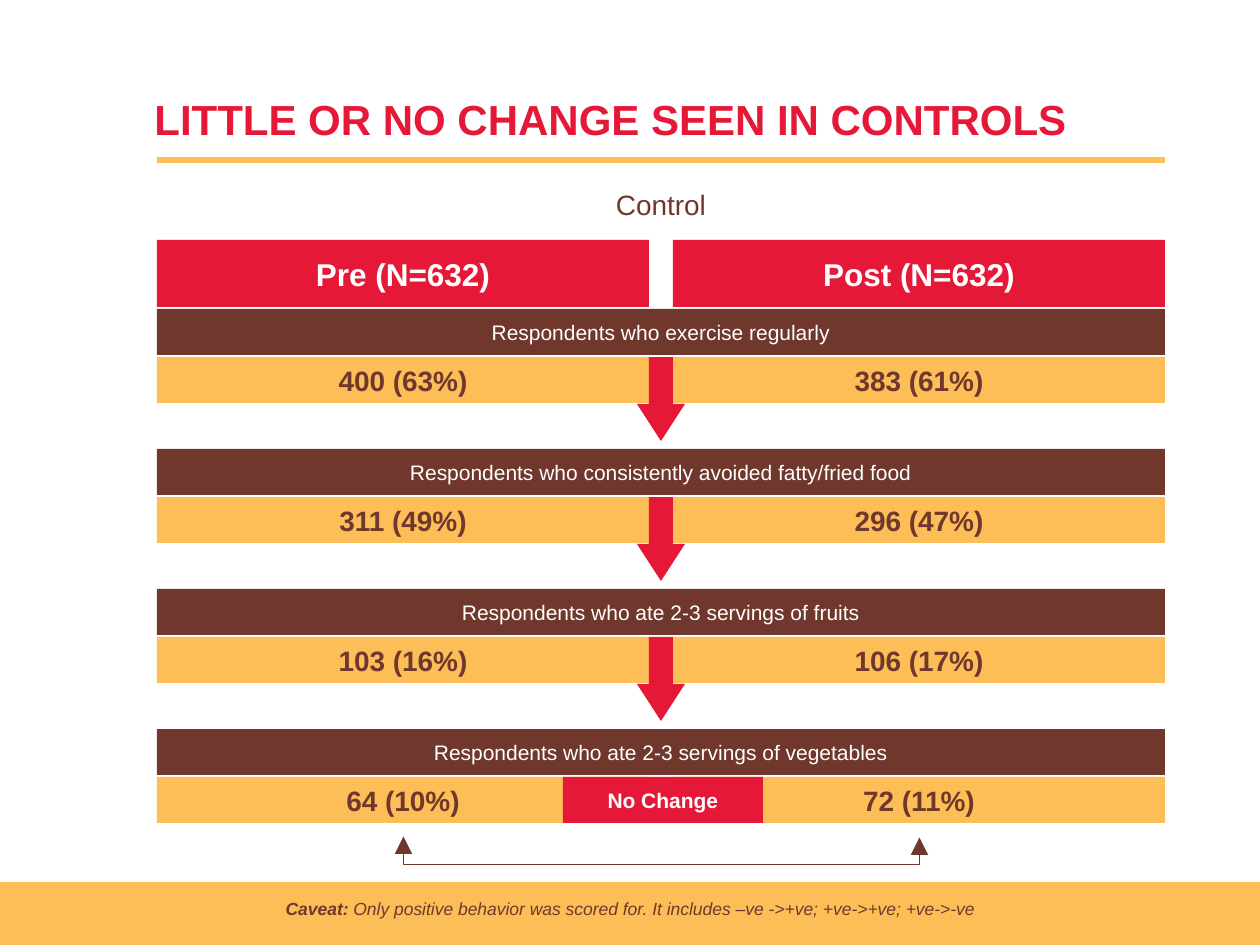
from lxml.etree import SubElement
from pptx import Presentation
from pptx.dml.color import RGBColor
from pptx.enum.shapes import MSO_CONNECTOR, MSO_SHAPE
from pptx.enum.text import MSO_ANCHOR, PP_ALIGN
from pptx.oxml.ns import qn
from pptx.util import Pt

# Content
TITLE = "LITTLE OR NO CHANGE SEEN IN CONTROLS"
GROUP = "Control"
HEADERS = ("Pre (N=632)", "Post (N=632)")
BEHAVIORS = [
    ("Respondents who exercise regularly", ("400 (63%)", "383 (61%)")),
    ("Respondents who consistently avoided fatty/fried food", ("311 (49%)", "296 (47%)")),
    ("Respondents who ate 2-3 servings of fruits", ("103 (16%)", "106 (17%)")),
    ("Respondents who ate 2-3 servings of vegetables", ("64 (10%)", "72 (11%)")),
]
RESULT = "No Change"
CAVEAT = ("Caveat: ", "Only positive behavior was scored for. "
          "It includes –ve ->+ve; +ve->+ve; +ve->-ve")

# Colours and layout (px, 126 to the inch)
RED, BROWN, GOLD, WHITE = "E51937", "70382D", "FDBE57", "FFFFFF"
SCALE = 914400 / 126
SLIDE_W, SLIDE_H = 1260, 945
LEFT, WIDTH, GAP = 157, 1008, 24
COL_W = (WIDTH - GAP) // 2
COLUMNS = (LEFT, LEFT + COL_W + GAP)
MIDDLE = LEFT + WIDTH // 2
FIRST_ROW, PITCH, BAR_H, VALUE_DY = 309, 140, 46, 48


def px(n):
    return round(n * SCALE)


def rgb(color):
    return RGBColor.from_string(color)


def style(font, size, color, bold=False, italic=False):
    font.name, font.size, font.bold, font.italic = "Arial", Pt(size), bold, italic
    font.color.rgb = rgb(color)


def add_block(x, y, w, h, fill, text="", size=12, color=WHITE, bold=False,
              kind=MSO_SHAPE.RECTANGLE):
    sp = s.shapes.add_shape(kind, px(x), px(y), px(w), px(h))
    sp.shadow.inherit = False
    sp.fill.solid()
    sp.fill.fore_color.rgb = rgb(fill)
    sp.line.fill.background()
    if text:
        tf = sp.text_frame
        tf.vertical_anchor = MSO_ANCHOR.MIDDLE
        p = tf.paragraphs[0]
        p.text, p.alignment = text, PP_ALIGN.CENTER
        style(p.font, size, color, bold)
    return sp


def add_text(x, y, w, h, runs, size, color, align=PP_ALIGN.CENTER, **look):
    tf = s.shapes.add_textbox(px(x), px(y), px(w), px(h)).text_frame
    tf.word_wrap = True
    p = tf.paragraphs[0]
    p.alignment = align
    style(p.font, size, color, **look)
    for text in runs:
        p.add_run().text = text
    return tf


def add_bracket(x1, x2, y, depth):
    # An elbow 1 px wide, turned a quarter so that its middle leg hangs below
    center, span = (x1 + x2) / 2, x2 - x1
    cn = s.shapes.add_connector(MSO_CONNECTOR.ELBOW, px(center), px(y - span / 2),
                                px(center + 1), px(y + span / 2))
    cn.line.color.rgb = rgb(BROWN)
    cn.line.width = Pt(0.5)
    pr = cn._element.spPr
    xfrm = pr.find(qn("a:xfrm"))
    xfrm.set("rot", str(270 * 60000))
    xfrm.set("flipH", "1")
    guides = pr.find(qn("a:prstGeom")).get_or_add_avLst()
    SubElement(guides, qn("a:gd"), name="adj1", fmla=f"val {depth * 100000}")
    ln = pr.find(qn("a:ln"))
    for end in ("a:headEnd", "a:tailEnd"):
        SubElement(ln, qn(end), type="triangle", w="lg", len="lg")
    SubElement(pr, qn("a:effectLst"))


prs = Presentation()
prs.slide_width, prs.slide_height = px(SLIDE_W), px(SLIDE_H)
s = prs.slides.add_slide(prs.slide_layouts[6])

# Title, rule and group name
add_block(LEFT, 157, WIDTH, 6, GOLD)
title = add_text(142, 83, 1118, 94, [TITLE], 24, RED, PP_ALIGN.LEFT, bold=True)
title.margin_top = px(10)
add_text(LEFT, 181, WIDTH, 46, [GROUP], 16, BROWN)

# Column headers
for x, text in zip(COLUMNS, HEADERS):
    add_block(x, 240, COL_W, 67, RED, text, 18, bold=True)

# Behaviors: a bar, two values, and an arrow on to the next one
for i, (label, values) in enumerate(BEHAVIORS):
    y = FIRST_ROW + i * PITCH
    value_y = y + VALUE_DY
    add_block(LEFT, y, WIDTH, BAR_H, BROWN, label)
    for x, value in zip(COLUMNS, values):
        add_block(x, value_y, COL_W, BAR_H, GOLD, value, 16, BROWN, True)
    if i < len(BEHAVIORS) - 1:
        arrow = add_block(MIDDLE - GAP, value_y, 2 * GAP, 84, RED,
                          kind=MSO_SHAPE.DOWN_ARROW)
        arrow.adjustments[0], arrow.adjustments[1] = 0.5, 0.77
    else:
        add_block(563, value_y, 200, BAR_H, RED, RESULT, bold=True)

# Bracket joining the last two values
add_bracket(*(x + COL_W // 2 for x in COLUMNS), 837, 28)

# Caveat band
add_block(0, 882, SLIDE_W, 63, GOLD)
caveat = add_text(0, 892, SLIDE_W, 34, CAVEAT, 10, BROWN, italic=True)
caveat.paragraphs[0].runs[0].font.bold = True

prs.save("out.pptx")
